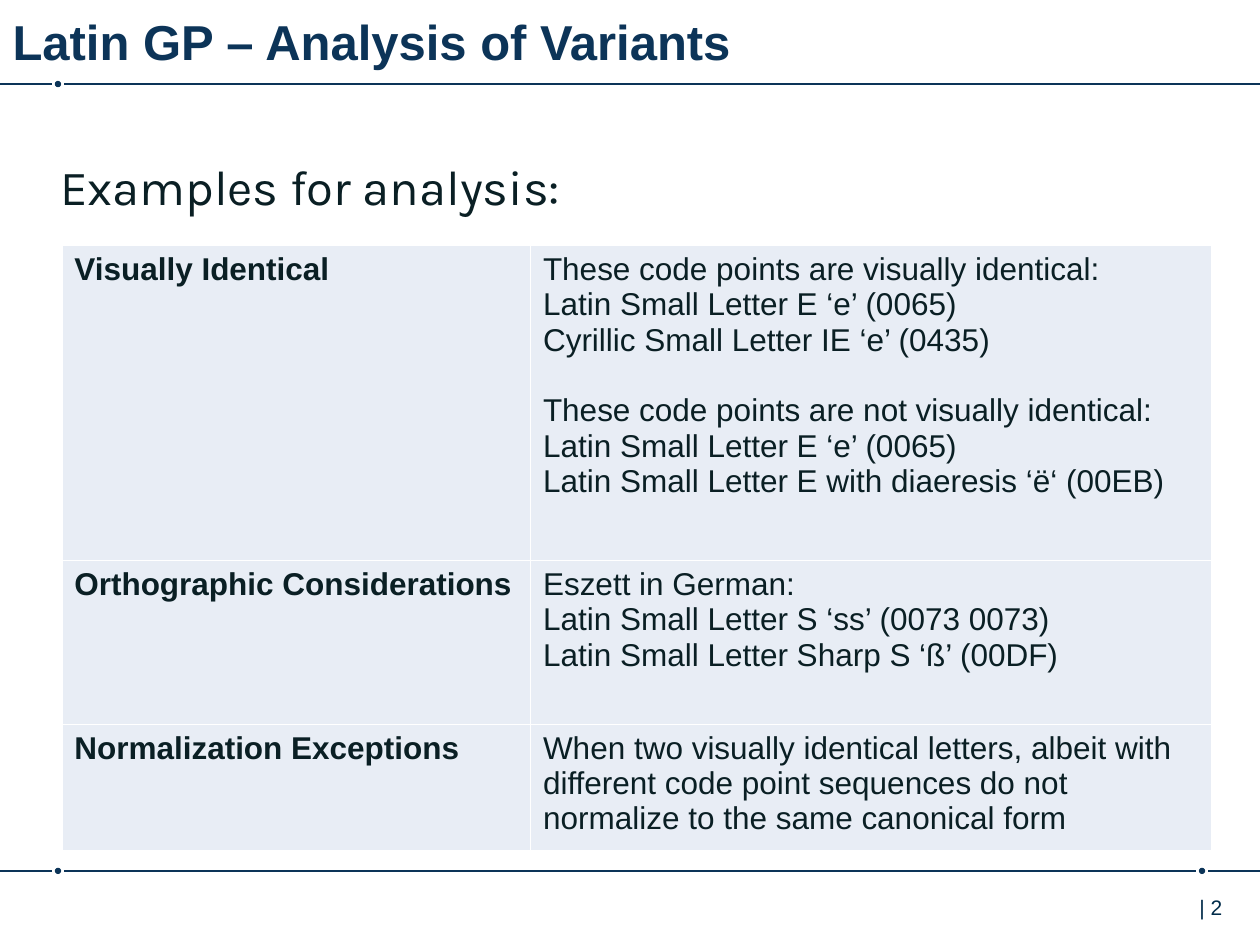
import dataclasses

import lxml.etree
import pptx
import pptx.dml.color
import pptx.enum.shapes
import pptx.enum.text
import pptx.oxml.ns
import pptx.util

COLUMNS, ROWS = 100, 75
GRID_STEP = 0.1
NAVY, INK, PAGE_INK, PALE, WHITE = "0C3458", "0A1F24", "002B49", "E8EDF5", "FFFFFF"
DOT_SIZE, DOT_GAP = 0.5, 0.5


@dataclasses.dataclass(frozen=True)
class Rule:
    row: float
    dots: tuple[float, ...]


@dataclasses.dataclass(frozen=True)
class Category:
    name: str
    height: float
    groups: tuple[tuple[str, ...], ...]


@dataclasses.dataclass(frozen=True)
class TextStyle:
    size: float
    hex_color: str
    font: str = "Arial"
    bold: bool = False


RULES = (Rule(6.67, (4.6,)), Rule(69.12, (4.6, 95.4)))
CATEGORIES = (
    Category("Visually Identical", 25, (
        ("These code points are visually identical:",
         "Latin Small Letter E ‘e’ (0065)",
         "Cyrillic Small Letter IE ‘е’ (0435)"),
        ("These code points are not visually identical:",
         "Latin Small Letter E ‘e’ (0065)",
         "Latin Small Letter E with diaeresis ‘ë‘ (00EB)"),
    )),
    Category("Orthographic Considerations", 13, (
        ("Eszett in German:",
         "Latin Small Letter S ‘ss’ (0073 0073)",
         "Latin Small Letter Sharp S ‘ß’ (00DF)"),
    )),
    Category("Normalization Exceptions", 10, (
        ("When two visually identical letters, albeit with different code point "
         "sequences do not normalize to the same canonical form",),
    )),
)


def grid(steps: float) -> int:
    return pptx.util.Inches(steps * GRID_STEP)


def color(hex_color: str) -> pptx.dml.color.RGBColor:
    return pptx.dml.color.RGBColor.from_string(hex_color)


def write(frame, text: str, style: TextStyle) -> None:
    frame.text = text
    for paragraph in frame.paragraphs:
        for run in paragraph.runs:
            run.font.name = style.font
            run.font.size = pptx.util.Pt(style.size)
            run.font.bold = style.bold
            run.font.color.rgb = color(style.hex_color)


def add_text(slide, text: str, left: float, top: float, width: float,
             height: float, style: TextStyle, inset_top: float) -> None:
    box = slide.shapes.add_textbox(grid(left), grid(top), grid(width), grid(height))
    box.text_frame.word_wrap = True
    box.text_frame.margin_top = grid(inset_top)
    write(box.text_frame, text, style)


def draw_line(slide, start: float, end: float, row: float) -> None:
    line = slide.shapes.add_connector(
        pptx.enum.shapes.MSO_CONNECTOR.STRAIGHT,
        grid(start), grid(row), grid(end), grid(row))
    line.line.color.rgb = color(NAVY)
    line.line.width = pptx.util.Pt(1)
    lxml.etree.SubElement(line._element.spPr, pptx.oxml.ns.qn("a:effectLst"))


def draw_rule(slide, rule: Rule) -> None:
    starts = (0, *(dot + DOT_GAP for dot in rule.dots))
    ends = (*(dot - DOT_GAP for dot in rule.dots), COLUMNS)
    for start, end in zip(starts, ends):
        draw_line(slide, start, end, rule.row)
    for center in rule.dots:
        dot = slide.shapes.add_shape(
            pptx.enum.shapes.MSO_SHAPE.OVAL,
            grid(center - DOT_SIZE / 2), grid(rule.row - DOT_SIZE / 2),
            grid(DOT_SIZE), grid(DOT_SIZE))
        dot.shadow.inherit = False
        dot.fill.solid()
        dot.fill.fore_color.rgb = color(NAVY)
        dot.line.fill.background()


def format_cell(cell) -> None:
    properties = cell._tc.get_or_add_tcPr()
    for side in ("lnL", "lnR", "lnT", "lnB"):
        border = lxml.etree.SubElement(
            properties, pptx.oxml.ns.qn(f"a:{side}"), w=str(pptx.util.Pt(1)))
        fill = lxml.etree.SubElement(border, pptx.oxml.ns.qn("a:solidFill"))
        lxml.etree.SubElement(fill, pptx.oxml.ns.qn("a:srgbClr"), val=WHITE)
    cell.fill.solid()
    cell.fill.fore_color.rgb = color(PALE)


def draw_categories(slide, categories: tuple[Category, ...]) -> None:
    widths = (37.2, 54.1)
    table = slide.shapes.add_table(
        len(categories), len(widths), grid(4.9), grid(19.5), grid(sum(widths)),
        grid(sum(category.height for category in categories))).table
    table.first_row = table.horz_banding = False
    for column, width in zip(table.columns, widths):
        column.width = grid(width)
    for row, category in zip(table.rows, categories):
        row.height = grid(category.height)
        name, examples = row.cells
        write(name.text_frame, category.name, TextStyle(18, INK, bold=True))
        lines = [line for group in category.groups for line in group]
        write(examples.text_frame, "\n".join(lines), TextStyle(18, INK))
        group_start = 0
        for group in category.groups[:-1]:
            group_start += len(group)
            examples.text_frame.paragraphs[group_start].space_before = pptx.util.Pt(20.2)
        for cell in row.cells:
            format_cell(cell)


def place_title(slide, text: str) -> None:
    title = slide.shapes.title
    title.left, title.top = grid(0), grid(-0.1)
    title.width, title.height = grid(COLUMNS), grid(7.8)
    frame = title.text_frame
    write(frame, text, TextStyle(28, NAVY, bold=True))
    frame.vertical_anchor = pptx.enum.text.MSO_ANCHOR.TOP
    frame.margin_top = grid(1)
    frame.paragraphs[0].alignment = pptx.enum.text.PP_ALIGN.LEFT


def main() -> None:
    presentation = pptx.Presentation()
    presentation.slide_width, presentation.slide_height = grid(COLUMNS), grid(ROWS)
    slide = presentation.slides.add_slide(
        presentation.slide_layouts.get_by_name("Title Only"))
    for rule in RULES:
        draw_rule(slide, rule)
    add_text(slide, "| 2", 94.2, 70.5, 7.4 - 1.6, 4, TextStyle(12, PAGE_INK), 0.5)
    place_title(slide, "Latin GP – Analysis of Variants")
    add_text(slide, "Examples for analysis:", 3.8, 11.4, 92.4, 29.3,
             TextStyle(28, INK, font="Karla"), 1)
    draw_categories(slide, CATEGORIES)
    presentation.save("out.pptx")


if __name__ == "__main__":
    main()
